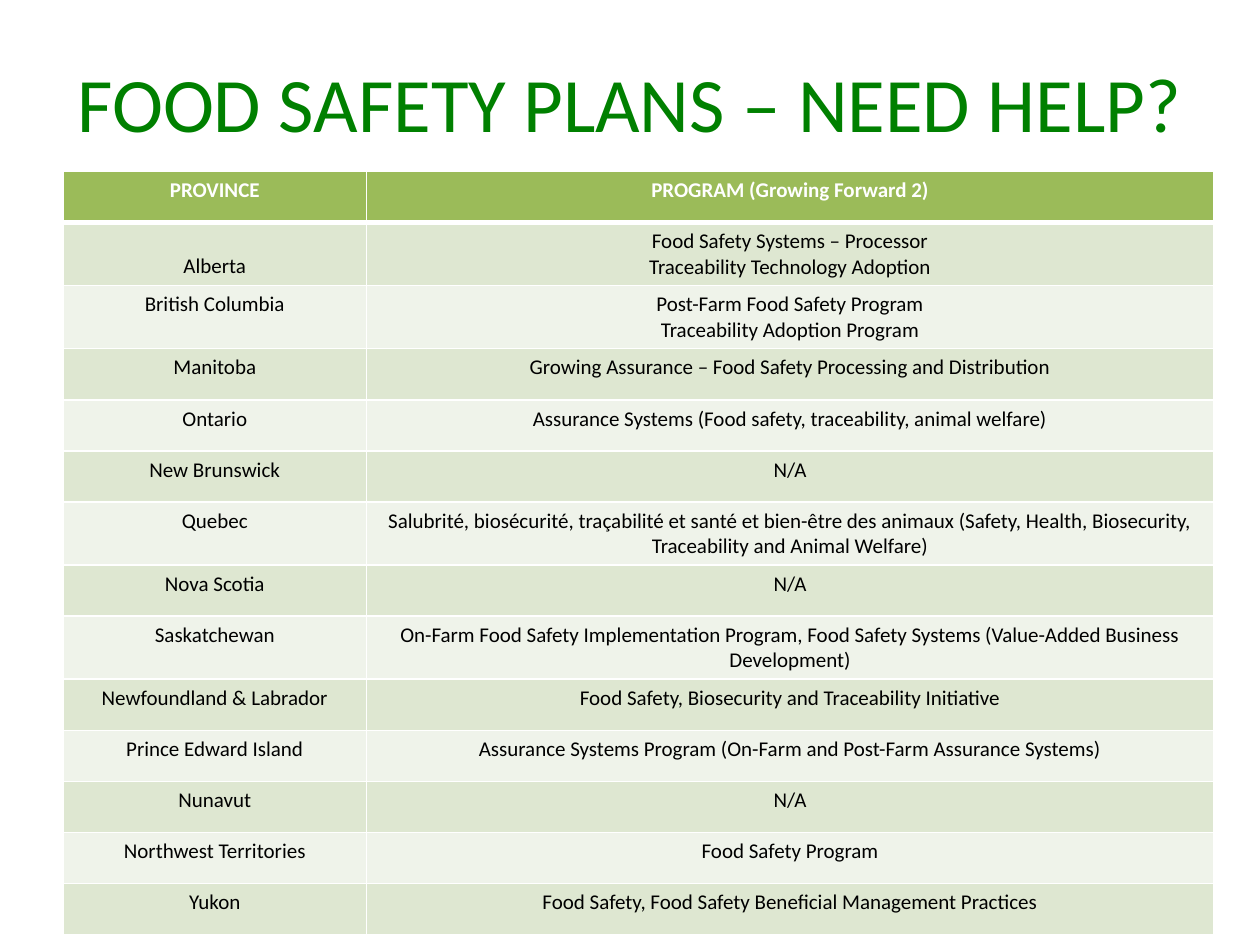
from lxml.etree import SubElement
from pptx import Presentation
from pptx.dml.color import RGBColor
from pptx.enum.text import MSO_ANCHOR, PP_ALIGN
from pptx.oxml.ns import qn
from pptx.util import Pt

GREEN = RGBColor(0x00, 0x80, 0x00)
OLIVE = RGBColor(0x9B, 0xBB, 0x59)
SAGE = RGBColor(0xDE, 0xE7, 0xD1)
PALE = RGBColor(0xEF, 0xF3, 0xEA)
WHITE = RGBColor(0xFF, 0xFF, 0xFF)
BLACK = RGBColor(0x00, 0x00, 0x00)

TITLE = {"name": "Calibri", "size": Pt(44), "bold": False}
HEAD = {"name": "Calibri", "size": Pt(12), "bold": True}
BODY = {**HEAD, "bold": False}

ROWS = [
    ("PROVINCE", "PROGRAM (Growing Forward 2)"),
    ("Alberta", "Food Safety Systems – Processor\nTraceability Technology Adoption"),
    ("British Columbia", "Post-Farm Food Safety Program\nTraceability Adoption Program"),
    ("Manitoba", "Growing Assurance – Food Safety Processing and Distribution"),
    ("Ontario", "Assurance Systems (Food safety, traceability, animal welfare)"),
    ("New Brunswick", "N/A"),
    ("Quebec", "Salubrité, biosécurité, traçabilité et santé et bien-être des animaux "
               "(Safety, Health, Biosecurity, Traceability and Animal Welfare)"),
    ("Nova Scotia", "N/A"),
    ("Saskatchewan", "On-Farm Food Safety Implementation Program, "
                     "Food Safety Systems (Value-Added Business Development)"),
    ("Newfoundland & Labrador", "Food Safety, Biosecurity and Traceability Initiative"),
    ("Prince Edward Island",
     "Assurance Systems Program (On-Farm and Post-Farm Assurance Systems)"),
    ("Nunavut", "N/A"),
    ("Northwest Territories", "Food Safety Program"),
    ("Yukon", "Food Safety, Food Safety Beneficial Management Practices"),
]


class Deck:
    def __init__(self):
        self.prs = Presentation()
        self.prs.slide_width, self.prs.slide_height = Pt(720), Pt(540)
        self.slide = self.prs.slides.add_slide(self.prs.slide_layouts[6])

    def label(self, frame, text, style, color):
        frame.text = text
        for para in frame.paragraphs:
            para.alignment = PP_ALIGN.CENTER
            for key, value in style.items():
                setattr(para.font, key, value)
            para.font.color.rgb = color

    def title(self, text, box):
        frame = self.slide.shapes.add_textbox(*map(Pt, box)).text_frame
        frame.word_wrap = True
        frame.vertical_anchor = MSO_ANCHOR.MIDDLE
        self.label(frame, text, TITLE, GREEN)

    def border(self, cell, base):
        props = cell._tc.get_or_add_tcPr()
        for side, width in (("L", 1), ("R", 1), ("T", 1), ("B", base)):
            line = SubElement(props, qn(f"a:ln{side}"), w=str(Pt(width)))
            fill = SubElement(line, qn("a:solidFill"))
            SubElement(fill, qn("a:srgbClr"), val=str(WHITE))

    def table(self, rows, left, top, widths, height):
        size = (left, top, sum(widths), height * len(rows))
        grid = self.slide.shapes.add_table(len(rows), len(widths), *map(Pt, size)).table
        for col, width in zip(grid.columns, widths):
            col.width = Pt(width)
        for i, row in enumerate(rows):
            grid.rows[i].height = Pt(height)
            tone = (SAGE if i % 2 else PALE) if i else OLIVE
            style, color = (BODY, BLACK) if i else (HEAD, WHITE)
            for j, text in enumerate(row):
                cell = grid.cell(i, j)
                self.label(cell.text_frame, text, style, color)
                self.border(cell, 1 if i else 3)
                cell.fill.solid()
                cell.fill.fore_color.rgb = tone
        return grid


def main():
    deck = Deck()
    deck.title("FOOD SAFETY PLANS – NEED HELP?", (36, 13, 648, 90))
    grid = deck.table(ROWS, 36, 98, (173.5, 484), 29.2)
    grid.cell(1, 0).vertical_anchor = MSO_ANCHOR.BOTTOM
    deck.prs.save("out.pptx")


if __name__ == "__main__":
    main()
